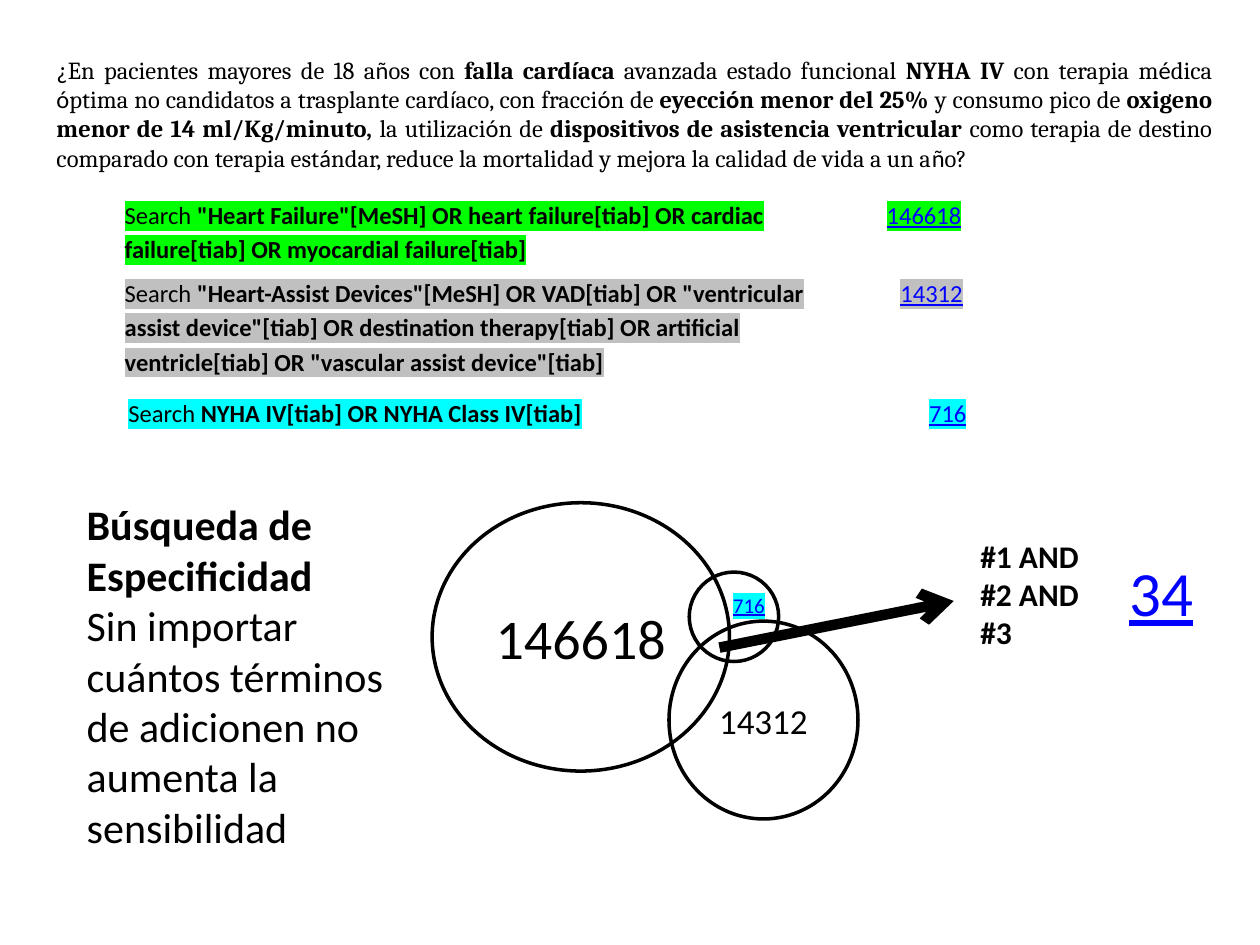
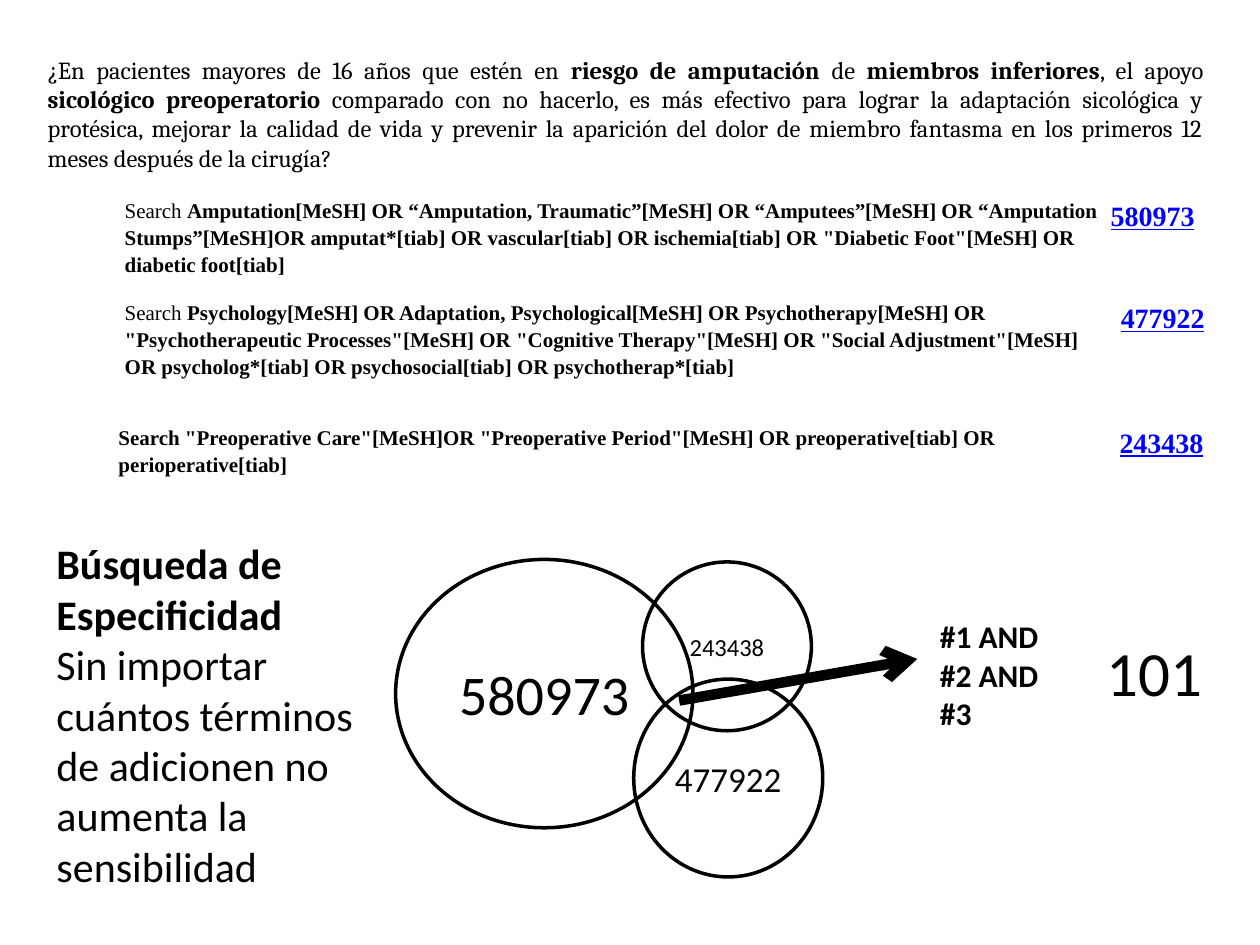
"""Two slides of literature searches, each with its question, queries and Venn diagram."""
from itertools import groupby

from lxml import etree
from pptx import Presentation
from pptx.dml.color import RGBColor
from pptx.enum.shapes import MSO_CONNECTOR, MSO_SHAPE
from pptx.enum.text import MSO_ANCHOR, MSO_AUTO_SIZE, PP_ALIGN
from pptx.oxml.ns import qn
from pptx.util import Inches, Pt

LEFT, MID, RIGHT, JUST = PP_ALIGN.LEFT, PP_ALIGN.CENTER, PP_ALIGN.RIGHT, PP_ALIGN.JUSTIFY
MIDDLE, TOP = MSO_ANCHOR.MIDDLE, MSO_ANCHOR.TOP
GROW = MSO_AUTO_SIZE.SHAPE_TO_FIT_TEXT
OVAL, LINE = MSO_SHAPE.OVAL, MSO_CONNECTOR.STRAIGHT
BLACK, BLUE = RGBColor(0, 0, 0), RGBColor(0, 0, 255)
LIME, GRAY, CYAN = "00FF00", "C0C0C0", "00FFFF"
SANS, SERIF, ROMAN = "Calibri", "Cambria", "Times New Roman"

NOTE = ["|Búsqueda de|", "|Especificidad|", "Sin importar",
        "cuántos términos de adicionen no aumenta la sensibilidad"]
LOGIC = "|#1 AND #2 AND #3|"

SLIDES = [
    {
        "ask": (0.35, "¿En pacientes mayores de 18 años con |falla cardíaca| avanzada estado "
                "funcional |NYHA IV| con terapia médica óptima no candidatos a trasplante "
                "cardíaco, con fracción de |eyección menor del 25%| y consumo pico de "
                "|oxigeno menor de 14 ml/Kg/minuto,| la utilización de |dispositivos de "
                "asistencia ventricular| como terapia de destino comparado con terapia "
                "estándar, reduce la mortalidad y mejora la calidad de vida a un año?"),
        "accent": SANS,
        "query": {"size": 14, "name": SANS},
        "count": {"size": 14, "name": SANS, "color": BLUE, "underline": True},
        "rows": [
            (0.98, 1.55, (5.98, 0.68), 0.54, LIME,
             'Search |"Heart Failure"[MeSH] OR heart failure[tiab] OR cardiac '
             'failure[tiab] OR myocardial failure[tiab]|', "146618"),
            (0.98, 2.17, (5.67, 1), 0.81, GRAY,
             'Search |"Heart-Assist Devices"[MeSH] OR VAD[tiab] OR "ventricular assist '
             'device"[tiab] OR destination therapy[tiab] OR artificial ventricle[tiab] '
             'OR "vascular assist device"[tiab]|', "14312"),
            (1.01, 3.12, (5.33, 1.34), 0.29, CYAN,
             "Search |NYHA IV[tiab] OR NYHA Class IV[tiab]|", "716"),
        ],
        "sets": [((3.43, 3.99, 2.36, 2.13), "146618", 32),
                 ((5.31, 4.93, 1.5, 1.57), "14312", 20),
                 ((5.47, 4.54, 0.71, 0.71), "", 12)],
        "tag": ((5.71, 4.62, 0.46, 0.32), "716"),
        "arrow": (5.71, 5.14, 7.57, 4.77),
        "result": (7.68, 4.22, (1.1, 0.79), "34", {"color": BLUE, "underline": True}),
        "note": (0.59, 3.91),
    },
    {
        "ask": (0.28, "¿En pacientes mayores de 16 años que estén en |riesgo de amputación| de "
                "|miembros inferiores|, el apoyo |sicológico preoperatorio |comparado con no "
                "hacerlo, es más efectivo para lograr la adaptación sicológica y protésica, "
                "mejorar la calidad de vida y prevenir la aparición del dolor de miembro "
                "fantasma en los primeros 12 meses después de la cirugía?"),
        "accent": SERIF,
        "query": {"size": 12, "name": ROMAN},
        "count": {"size": 16, "name": ROMAN, "color": BLUE, "underline": True, "bold": True},
        "rows": [
            (0.98, 1.55, (7.8, 0.71), 0.69, None,
             "Search |Amputation[MeSH] OR “Amputation, Traumatic”[MeSH] OR "
             "“Amputees”[MeSH] OR “Amputation Stumps”[MeSH]OR amputat*[tiab] OR "
             'vascular[tiab] OR ischemia[tiab] OR "Diabetic Foot"[MeSH] OR '
             "diabetic foot[tiab]|", "580973"),
            (0.98, 2.36, (7.73, 0.86), 0.71, None,
             "Search |Psychology[MeSH] OR Adaptation, Psychological[MeSH] OR "
             'Psychotherapy[MeSH] OR "Psychotherapeutic Processes"[MeSH] OR "Cognitive '
             'Therapy"[MeSH] OR "Social Adjustment"[MeSH] OR psycholog*[tiab] OR '
             "psychosocial[tiab] OR psychotherap*[tiab]|", "477922"),
            (0.93, 3.35, (7.69, 0.94), 0.46, None,
             '|Search "Preoperative Care"[MeSH]OR "Preoperative Period"[MeSH] OR '
             "preoperative[tiab] OR perioperative[tiab]|", "243438"),
        ],
        "sets": [((3.14, 4.44, 2.36, 2.13), "580973", 32),
                 ((5.03, 5.39, 1.5, 1.57), "477922", 20),
                 ((5.1, 4.46, 1.34, 1.34), "243438", 14)],
        "tag": None,
        "arrow": (5.39, 5.56, 7.28, 5.23),
        "result": (7.36, 4.86, (1.03, 1.25), "101", {}),
        "note": (0.35, 4.22),
    },
]


def add_run(para, text, form, mark=None):
    run = para.add_run()
    run.text = text
    form = {"color": BLACK, "name": SANS, "bold": False, **form}
    run.font.color.rgb = form.pop("color")
    run.font.size = Pt(form.pop("size"))
    for key, value in form.items():
        setattr(run.font, key, value)
    if mark:
        light = etree.Element(qn("a:highlight"))
        etree.SubElement(light, qn("a:srgbClr")).set("val", mark)
        run.font._element.find(qn("a:solidFill")).addnext(light)


def write(frame, lines, form, align=LEFT, space=None, mark=None, accent=None):
    for num, line in enumerate(lines):
        para = frame.add_paragraph() if num else frame.paragraphs[0]
        para.alignment = align
        if space:
            para.line_spacing = space
        for part, text in enumerate(line.split("|")):
            look = {**form, "bold": True} if part % 2 else form
            for plain, chars in groupby(text, lambda c: not accent or c.isascii()):
                font = look if plain else {**look, "name": accent}
                add_run(para, "".join(chars), font, mark)


def add_text(slide, box, lines, form, anchor=TOP, wrap=True, **style):
    frame = slide.shapes.add_textbox(*map(Inches, box)).text_frame
    frame.word_wrap, frame.auto_size = wrap, GROW
    frame.vertical_anchor = anchor
    write(frame, lines, form, **style)


def add_row(slide, left, top, widths, height, pair, forms, inset=None, anchor=TOP, **style):
    box = map(Inches, (left, top, sum(widths), height))
    table = slide.shapes.add_table(1, 2, *box).table
    table.first_row = table.horz_banding = False
    for col, width in enumerate(widths):
        table.columns[col].width = Inches(width)
        cell = table.cell(0, col)
        cell.fill.background()
        cell.vertical_anchor = anchor
        if inset:
            for side in ("left", "right", "top", "bottom"):
                setattr(cell, f"margin_{side}", Inches(inset))
        write(cell.text_frame, [pair[col]], forms[col], (LEFT, RIGHT)[col], **style)


def add_set(slide, box, text, size):
    oval = slide.shapes.add_shape(OVAL, *map(Inches, box))
    oval.shadow.inherit = False
    oval.fill.background()
    oval.line.color.rgb, oval.line.width = BLACK, Pt(2)
    oval.text_frame.vertical_anchor = MIDDLE
    write(oval.text_frame, [text], {"size": size}, MID)


def add_arrow(slide, ends):
    arrow = slide.shapes.add_connector(LINE, *map(Inches, ends))
    arrow.line.color.rgb, arrow.line.width = BLACK, Pt(6)
    props = arrow._element.spPr
    etree.SubElement(props.find(qn("a:ln")), qn("a:tailEnd")).set("type", "arrow")
    etree.SubElement(props, qn("a:effectLst"))


def build(slide, data):
    left, ask = data["ask"]
    add_text(slide, (left, 0.38, 9.37, 1.04), [ask], {"size": 14, "name": SERIF},
             MIDDLE, align=JUST, accent=data["accent"])
    for left, top, widths, height, mark, query, count in data["rows"]:
        add_row(slide, left, top, widths, height, (query, count),
                (data["query"], data["count"]), 0.01, space=1.15, mark=mark)
    for item in data["sets"]:
        add_set(slide, *item)
    if data["tag"]:
        box, text = data["tag"]
        add_text(slide, box, [text], {**data["count"], "size": 12},
                 wrap=False, align=RIGHT, space=1.15, mark=CYAN)
    add_arrow(slide, data["arrow"])
    left, top, widths, total, look = data["result"]
    add_row(slide, left, top, widths, 1, (LOGIC, total),
            ({"size": 18}, {"size": 36, **look}), anchor=MIDDLE)
    add_text(slide, (*data["note"], 2.6, 2.93), NOTE, {"size": 24})


def main():
    deck = Presentation()
    deck.slide_width, deck.slide_height = Inches(10), Inches(7.5)
    for data in SLIDES:
        build(deck.slides.add_slide(deck.slide_layouts[6]), data)
    deck.save("out.pptx")


if __name__ == "__main__":
    main()
